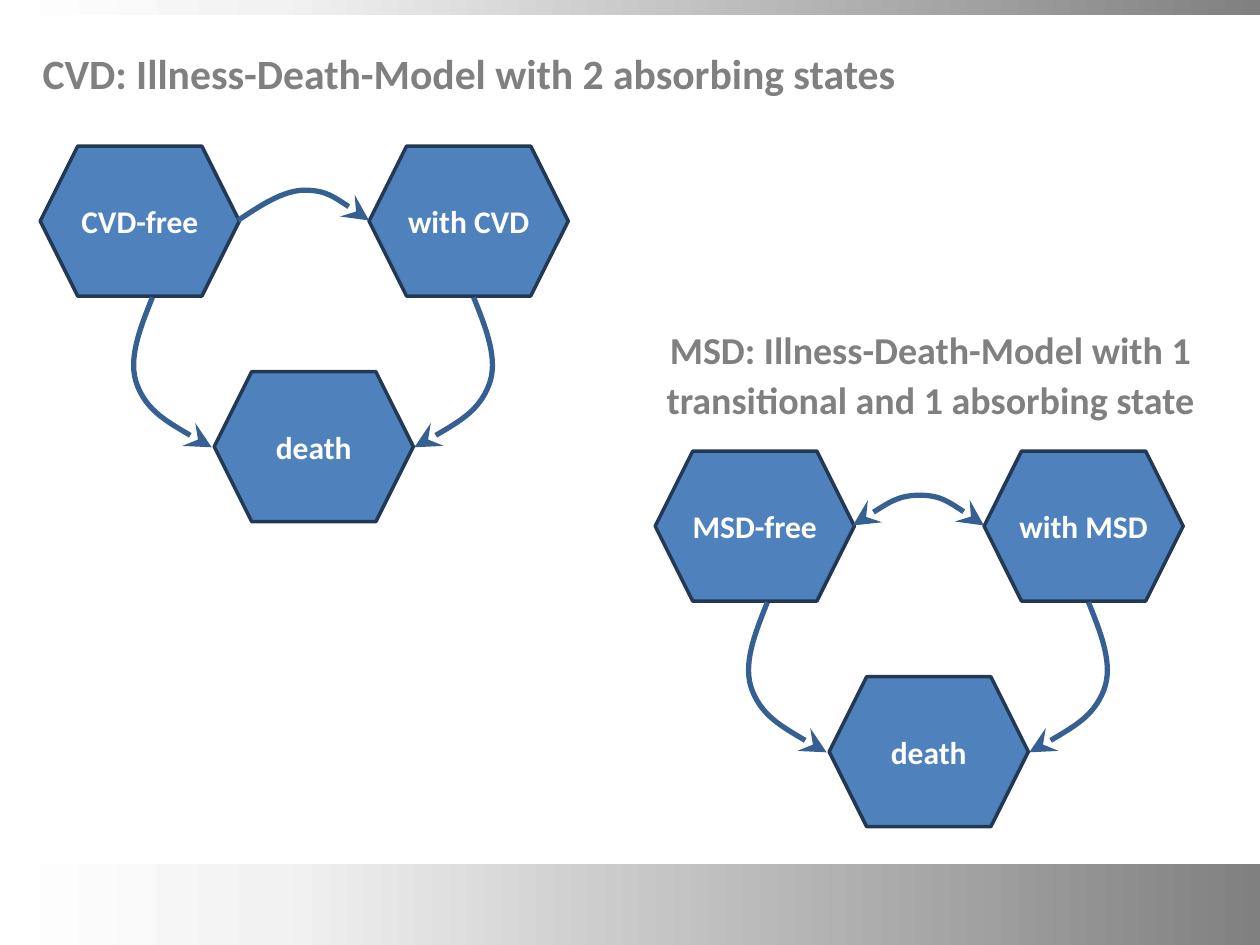
"""Build a slide with two illness-death models drawn as hexagon state diagrams."""
from copy import deepcopy

from lxml import etree
from pptx import Presentation
from pptx.dml.color import RGBColor
from pptx.enum.shapes import MSO_SHAPE
from pptx.enum.text import MSO_ANCHOR, MSO_AUTO_SIZE, PP_ALIGN
from pptx.oxml.ns import qn
from pptx.util import Pt

RECTANGLE, HEXAGON = MSO_SHAPE.RECTANGLE, MSO_SHAPE.HEXAGON
CENTER, MIDDLE = PP_ALIGN.CENTER, MSO_ANCHOR.MIDDLE
NO_AUTOFIT = MSO_AUTO_SIZE.NONE
WHITE = RGBColor(0xFF, 0xFF, 0xFF)
PALE = RGBColor(0xF2, 0xF2, 0xF2)
GRAY = RGBColor(0x80, 0x80, 0x80)
BLUE = RGBColor(0x4F, 0x81, 0xBD)
OUTLINE = RGBColor(0x23, 0x39, 0x53)
ARROW = RGBColor(0x37, 0x60, 0x92)
FONT = "Calibri"

SLIDE_WIDTH, SLIDE_HEIGHT = 720, 540
BANDS = [(0, 8.6), (493.9, 46.1)]
GRADIENT = [(0, WHITE), (0.22, PALE), (1, GRAY)]
TITLE = ("CVD: Illness-Death-Model with 2 absorbing states",
         (3.6, 6.5, 528.5, 64.8), 23.8, 1.2)
SUBTITLE = ("MSD: Illness-Death-Model with 1 transitional and 1 absorbing state",
            (359.3, 180, 344.9, 64.8), 21.7, 1.1)
MODELS = [
    {"origin": (23, 83.5), "states": ("CVD-free", "with CVD", "death"), "reversible": False},
    {"origin": (374.4, 257.8), "states": ("MSD-free", "with MSD", "death"), "reversible": True},
]

STATE_WIDTH, STATE_HEIGHT = 113.8, 85.7
STATE_OFFSETS = [(0, 0), (187.9, 0), (99.4, 128.9)]
ILLNESS_CURVE = [(113, 42.5), (126, 33.8), (139, 25.2), (151.2, 25.2),
                 (163.4, 25.2), (175.7, 33.8), (187.9, 42.5)]
ILL_DEATH_CURVE = [(247.7, 86.4), (254.9, 104.4), (262.1, 122.4), (256.3, 136.8),
                   (250.6, 151.2), (232.6, 162), (213.8, 172.1)]
MIRROR_SUM = 311.8
FREE_DEATH_CURVE = [(MIRROR_SUM - x, y) for x, y in ILL_DEATH_CURVE]


def write(shape, text, size, color, spacing=1.0):
    frame = shape.text_frame
    frame.word_wrap = True
    frame.auto_size = NO_AUTOFIT
    frame.vertical_anchor = MIDDLE
    frame.text = text
    paragraph = frame.paragraphs[0]
    paragraph.alignment = CENTER
    paragraph.line_spacing = spacing
    font = paragraph.font
    font.name, font.size, font.bold = FONT, Pt(size), True
    font.color.rgb = color


def add_band(slide, top, height):
    band = slide.shapes.add_shape(RECTANGLE, 0, Pt(top), Pt(SLIDE_WIDTH), Pt(height))
    band.shadow.inherit = False
    band.line.fill.background()
    band.fill.gradient()
    band.fill.gradient_angle = 0
    stop_list = band.element.xpath(".//a:gsLst")[0]
    stop_list.append(deepcopy(stop_list[0]))
    for stop, (position, color) in zip(band.fill.gradient_stops, GRADIENT):
        stop.position = position
        stop.color.rgb = color


def add_state(slide, left, top, label):
    state = slide.shapes.add_shape(HEXAGON, Pt(left), Pt(top), Pt(STATE_WIDTH), Pt(STATE_HEIGHT))
    state.shadow.inherit = False
    state.fill.solid()
    state.fill.fore_color.rgb = BLUE
    state.line.color.rgb = OUTLINE
    state.line.width = Pt(2)
    write(state, label, 18, WHITE)
    frame = state.text_frame
    frame.margin_left = frame.margin_right = Pt(2.9)
    frame.margin_top = frame.margin_bottom = Pt(3.6)


def add_curve(slide, origin, points, ends):
    placed = [(Pt(origin[0] + x), Pt(origin[1] + y)) for x, y in points]
    builder = slide.shapes.build_freeform(*placed[0])
    builder.add_line_segments(placed[1:], close=False)
    curve = builder.convert_to_shape()
    curve.shadow.inherit = False
    curve.fill.background()
    curve.line.color.rgb = ARROW
    curve.line.width = Pt(3)
    segments = curve.element.xpath(".//a:lnTo")
    for start in range(0, len(segments), 3):
        bezier = etree.SubElement(segments[start].getparent(), qn("a:cubicBezTo"))
        for segment in segments[start:start + 3]:
            bezier.append(segment[0])
            segment.getparent().remove(segment)
    line = curve.element.xpath("./p:spPr/a:ln")[0]
    for end in ends:
        etree.SubElement(line, qn(end), type="stealth", w="lg", len="lg")


def main():
    presentation = Presentation()
    presentation.slide_width, presentation.slide_height = Pt(SLIDE_WIDTH), Pt(SLIDE_HEIGHT)
    slide = presentation.slides.add_slide(presentation.slide_layouts[5])
    for top, height in BANDS:
        add_band(slide, top, height)

    text, box, size, spacing = TITLE
    title = slide.shapes.title
    title.left, title.top, title.width, title.height = map(Pt, box)
    write(title, text, size, GRAY, spacing)
    text, box, size, spacing = SUBTITLE
    write(slide.shapes.add_textbox(*map(Pt, box)), text, size, GRAY, spacing)

    for model in MODELS:
        left, top = model["origin"]
        for (x, y), label in zip(STATE_OFFSETS, model["states"]):
            add_state(slide, left + x, top + y, label)
        both = ("a:headEnd", "a:tailEnd")
        add_curve(slide, (left, top), ILLNESS_CURVE, both if model["reversible"] else both[1:])
        for points in (ILL_DEATH_CURVE, FREE_DEATH_CURVE):
            add_curve(slide, (left, top), points, both[1:])
    presentation.save("out.pptx")


if __name__ == "__main__":
    main()
